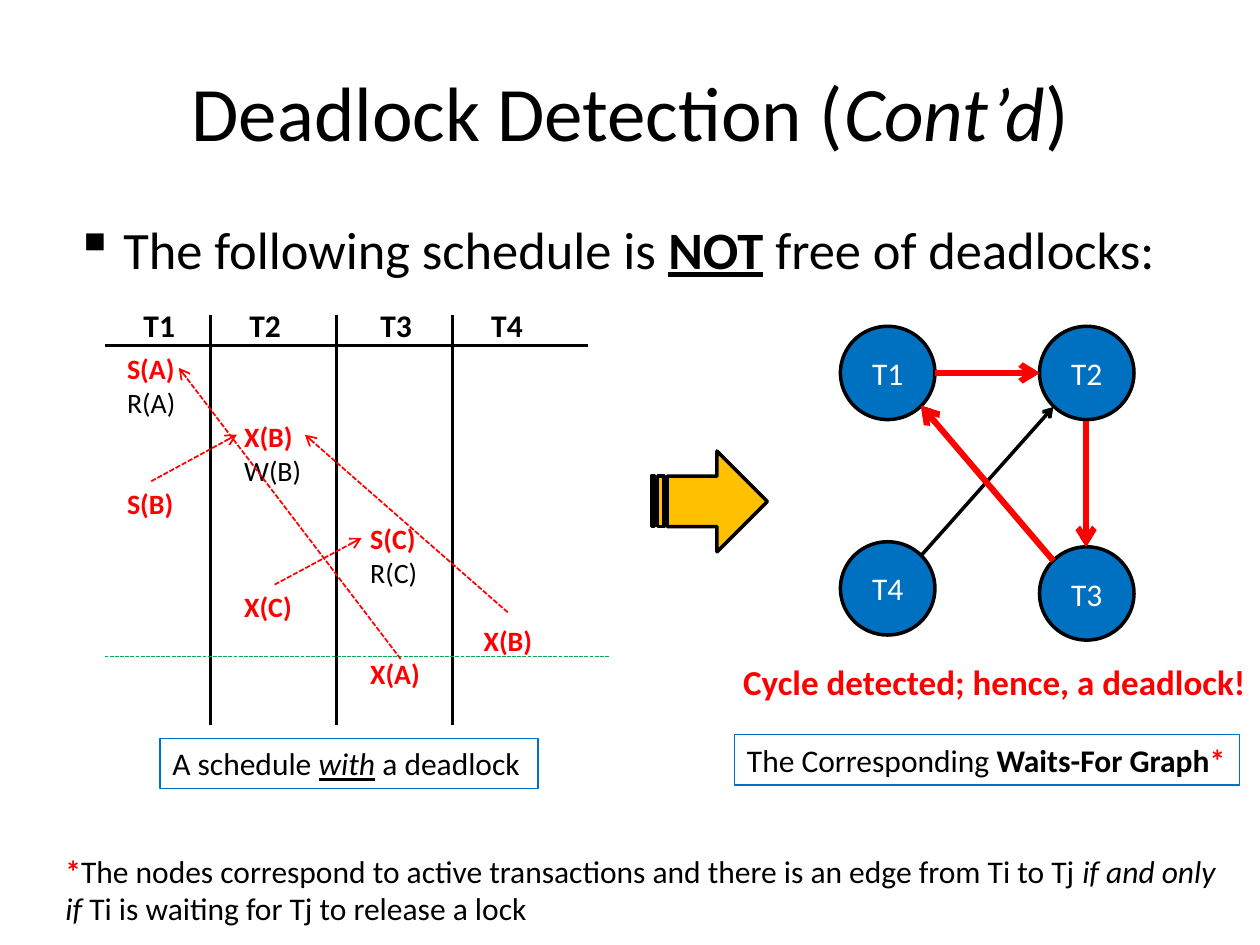
from typing import NamedTuple

from lxml.etree import SubElement
from pptx import Presentation
from pptx.dml.color import RGBColor
from pptx.enum.dml import MSO_LINE
from pptx.enum.shapes import MSO_CONNECTOR, MSO_SHAPE
from pptx.enum.text import MSO_ANCHOR, MSO_AUTO_SIZE, PP_ALIGN
from pptx.oxml.ns import qn
from pptx.util import Inches, Pt

BLACK, RED, WHITE = "000000", "FF0000", "FFFFFF"
BLUE, GREEN, AMBER = "0070C0", "00B050", "FFC000"
ROW_HEIGHT = 0.27
ROW_POINTS = 19.5
SCHEDULE_TOP = 2.74


class Span(NamedTuple):
    text: str
    color: str = BLACK
    bold: bool = False
    italic: bool = False
    underline: bool = False


class Operation(NamedTuple):
    row: int
    text: str
    locks: bool = True


class Transaction(NamedTuple):
    name: str
    header_left: float
    left: float
    width: float
    operations: tuple[Operation, ...]


class Node(NamedTuple):
    name: str
    left: float
    top: float


class Line(NamedTuple):
    start: tuple[float, float]
    end: tuple[float, float]
    color: str = BLACK
    weight: float = 1.5
    arrow: bool = False
    dashed: bool = False


TRANSACTIONS = (
    Transaction("T1", 1.04, 0.91, 0.59, (
        Operation(0, "S(A)"), Operation(1, "R(A)", False), Operation(4, "S(B)"))),
    Transaction("T2", 1.88, 1.84, 0.66, (
        Operation(2, "X(B)"), Operation(3, "W(B)", False), Operation(7, "X(C)"))),
    Transaction("T3", 2.92, 2.84, 0.6, (
        Operation(5, "S(C)"), Operation(6, "R(C)", False), Operation(9, "X(A)"))),
    Transaction("T4", 3.8, 3.74, 0.59, (Operation(8, "X(B)"),)),
)
NODES = (Node("T1", 6.67, 2.59), Node("T2", 8.25, 2.59),
         Node("T4", 6.67, 4.3), Node("T3", 8.25, 4.34))
GRID = (
    *(Line((x, 2.5), (x, 5.75)) for x in (1.67, 2.67, 3.59)),
    Line((0.83, 2.74), (4.67, 2.74)),
    Line((0.83, 5.21), (4.83, 5.21), GREEN, 0.75, dashed=True),
)
CYCLE = (((7.42, 2.96), (8.25, 2.96)),
         ((8.62, 3.34), (8.62, 4.34)),
         ((8.36, 4.45), (7.31, 3.22)))
WAITING_EDGES = (*CYCLE, ((7.31, 4.41), (8.36, 3.23)))
LOCK_WAITS = (((1.2, 3.82), (1.88, 3.45)),
              ((2.18, 4.64), (2.87, 4.27)),
              ((4.03, 4.86), (2.42, 3.45)),
              ((3.18, 5.23), (1.42, 2.92)))


def rgb(color: str) -> RGBColor:
    return RGBColor.from_string(color)


def write(para, spans: tuple[Span, ...], size: float) -> None:
    para.font.name = "Calibri"
    para.font.size = Pt(size)
    for span in spans:
        run = para.add_run()
        run.text = span.text
        run.font.color.rgb = rgb(span.color)
        run.font.bold = span.bold
        run.font.italic = span.italic
        run.font.underline = span.underline


def add_text(page, left: float, top: float, width: float, height: float,
             spans: tuple[Span, ...], size: float = 18, wrap: bool = False):
    box = page.shapes.add_textbox(*map(Inches, (left, top, width, height)))
    box.text_frame.word_wrap = wrap
    box.text_frame.auto_size = MSO_AUTO_SIZE.SHAPE_TO_FIT_TEXT
    write(box.text_frame.paragraphs[0], spans, size)
    return box


def add_caption(page, left: float, top: float, width: float,
                spans: tuple[Span, ...]) -> None:
    box = add_text(page, left, top, width, 0.4, spans)
    box.line.color.rgb = rgb(BLUE)
    box.line.width = Pt(0.75)


def add_bullet(para, symbol: str, indent: float) -> None:
    properties = para._p.get_or_add_pPr()
    properties.set("marL", str(Inches(indent)))
    properties.set("indent", str(-Inches(indent)))
    SubElement(properties, qn("a:buChar")).set("char", symbol)


def add_line(page, line: Line) -> None:
    connector = page.shapes.add_connector(
        MSO_CONNECTOR.STRAIGHT, *map(Inches, (*line.start, *line.end)))
    connector.line.color.rgb = rgb(line.color)
    connector.line.width = Pt(line.weight)
    if line.dashed:
        connector.line.dash_style = MSO_LINE.SQUARE_DOT
    if line.arrow:
        SubElement(connector.line._get_or_add_ln(), qn("a:tailEnd")).set("type", "arrow")
    SubElement(connector._element.spPr, qn("a:effectLst"))


def add_solid(page, preset: MSO_SHAPE, left: float, top: float,
              width: float, height: float, fill: str):
    shape = page.shapes.add_shape(preset, *map(Inches, (left, top, width, height)))
    shape.shadow.inherit = False
    shape.fill.solid()
    shape.fill.fore_color.rgb = rgb(fill)
    shape.line.color.rgb = rgb(BLACK)
    shape.line.width = Pt(2)
    return shape


def add_node(page, node: Node) -> None:
    circle = add_solid(page, MSO_SHAPE.OVAL, node.left, node.top, 0.75, 0.74, BLUE)
    circle.text_frame.vertical_anchor = MSO_ANCHOR.MIDDLE
    para = circle.text_frame.paragraphs[0]
    para.alignment = PP_ALIGN.CENTER
    write(para, (Span(node.name, WHITE),), 18)


def add_transaction(page, transaction: Transaction) -> None:
    """Draw a column whose skipped rows become paragraph spacing."""
    add_text(page, transaction.header_left, 2.38, 0.45, 0.4,
             (Span(transaction.name, bold=True),))
    first, last = transaction.operations[0].row, transaction.operations[-1].row
    box = None
    previous = first
    for operation in transaction.operations:
        spans = (Span(operation.text, RED if operation.locks else BLACK, operation.locks),)
        if box is None:
            box = add_text(page, transaction.left, SCHEDULE_TOP + first * ROW_HEIGHT,
                           transaction.width, 0.1 + (last - first + 1) * ROW_HEIGHT,
                           spans, 16)
        else:
            para = box.text_frame.add_paragraph()
            para.space_before = Pt((operation.row - previous - 1) * ROW_POINTS)
            write(para, spans, 16)
        previous = operation.row


def main() -> None:
    deck = Presentation()
    deck.slide_width, deck.slide_height = Inches(10), Inches(7.5)
    page = deck.slides.add_slide(deck.slide_layouts[5])

    title = page.shapes.title
    title.left, title.top, title.width, title.height = map(Inches, (0.5, 0.25, 9, 1.25))
    title.text_frame.vertical_anchor = MSO_ANCHOR.MIDDLE
    heading = title.text_frame.paragraphs[0]
    heading.alignment = PP_ALIGN.CENTER
    write(heading, (Span("Deadlock Detection ("), Span("Cont’d", italic=True), Span(")")), 44)

    statement = add_text(page, 0.5, 1.67, 9.25, 0.61, (
        Span("The following schedule is "), Span("NOT", bold=True, underline=True),
        Span(" free of deadlocks:")), 30, wrap=True)
    add_bullet(statement.text_frame.paragraphs[0], "▪", 0.38)

    for line in GRID:
        add_line(page, line)
    for transaction in TRANSACTIONS:
        add_transaction(page, transaction)
    add_solid(page, MSO_SHAPE.STRIPED_RIGHT_ARROW, 5.17, 3.58, 0.92, 0.8, AMBER)
    for node in NODES:
        add_node(page, node)
    for start, end in WAITING_EDGES:
        add_line(page, Line(start, end, BLACK, 2, arrow=True))
    for start, end in LOCK_WAITS:
        add_line(page, Line(start, end, RED, 1, arrow=True, dashed=True))
    for start, end in CYCLE:
        add_line(page, Line(start, end, RED, 3.5, arrow=True))

    add_text(page, 5.8, 5.19, 4.23, 0.44,
             (Span("Cycle detected; hence, a deadlock!", RED, True),), 20)
    add_caption(page, 5.83, 5.83, 4.01, (
        Span("The Corresponding "), Span("Waits-For Graph", bold=True), Span("*", RED, True)))
    add_caption(page, 1.27, 5.86, 3, (
        Span("A schedule "), Span("with", italic=True, underline=True), Span(" a deadlock")))
    add_text(page, 0.42, 6.71, 9.42, 0.71, (
        Span("*", RED, True),
        Span("The nodes correspond to active transactions and there is an edge from Ti to Tj "),
        Span("if and only if", italic=True),
        Span(" Ti is waiting for Tj to release a lock")), wrap=True)
    deck.save("out.pptx")


if __name__ == "__main__":
    main()
